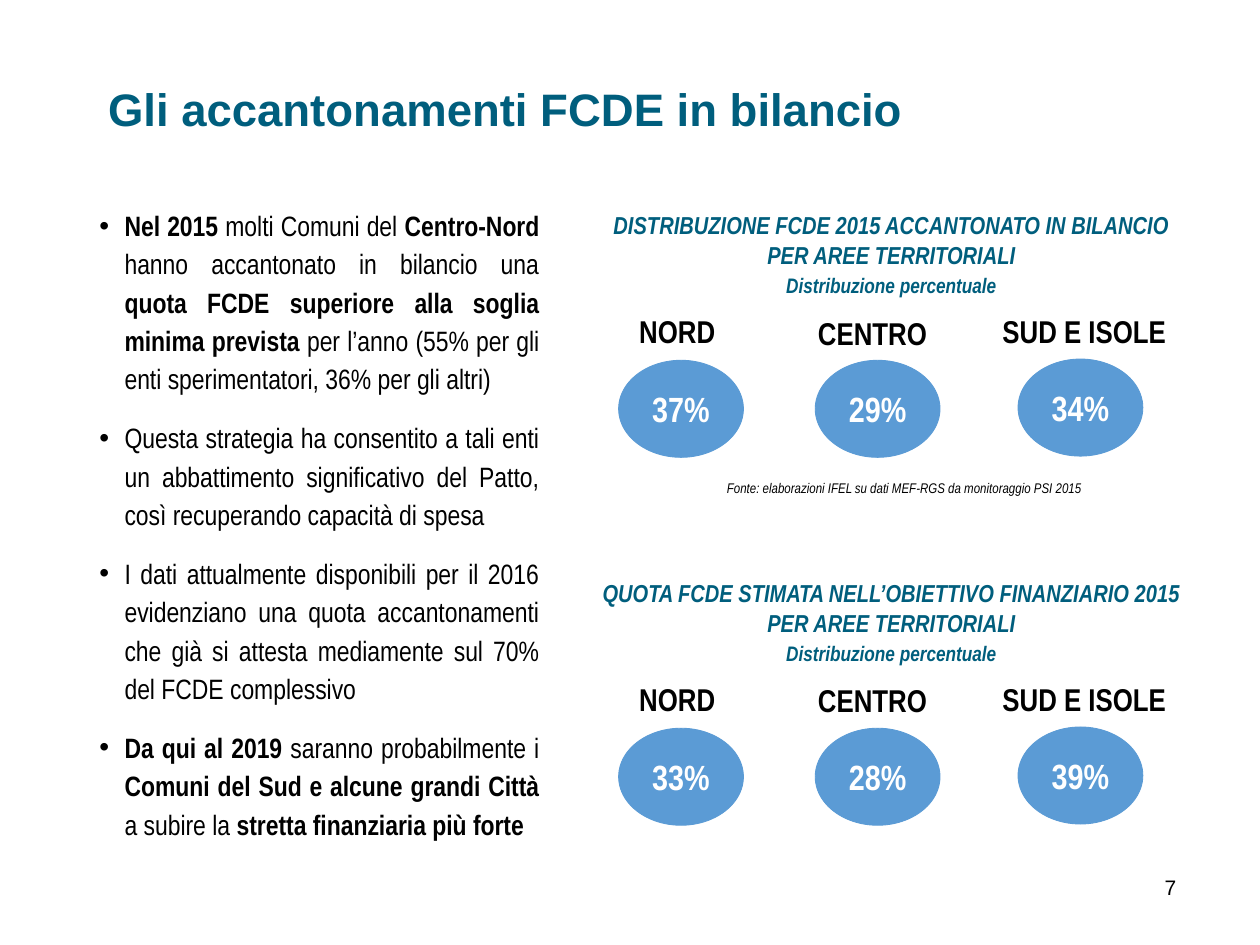
from lxml import etree
from pptx import Presentation
from pptx.dml.color import RGBColor
from pptx.enum.shapes import MSO_SHAPE
from pptx.enum.text import MSO_ANCHOR, PP_ALIGN
from pptx.oxml.ns import qn
from pptx.util import Inches, Pt

LEFT, CENTER, JUSTIFY = PP_ALIGN.LEFT, PP_ALIGN.CENTER, PP_ALIGN.JUSTIFY
MIDDLE = MSO_ANCHOR.MIDDLE
OVAL = MSO_SHAPE.OVAL

TEAL = RGBColor(0x00, 0x5E, 0x7D)
BLUE = RGBColor(0x5B, 0x9B, 0xD5)
BLACK = RGBColor(0x00, 0x00, 0x00)
WHITE = RGBColor(0xFF, 0xFF, 0xFF)

SANS, NARROW = "Arial", "Arial Narrow"
WIDTH, HEIGHT = Inches(10), Inches(7.5)
COLUMNS, ROWS = 100, 75

BULLETS = [
    [("Nel 2015", True), (" molti Comuni del", False), (" Centro-Nord ", True),
     ("hanno accantonato in bilancio una", False),
     (" quota FCDE superiore alla soglia minima prevista ", True),
     ("per l’anno (55% per gli enti sperimentatori, 36% per gli altri)", False)],
    [("Questa strategia ha consentito a tali enti un abbattimento significativo "
      "del Patto, così recuperando capacità di spesa", False)],
    [("I dati attualmente disponibili per il 2016 evidenziano una quota "
      "accantonamenti che già si attesta mediamente sul 70% del FCDE complessivo", False)],
    [("Da qui al 2019", True), (" saranno probabilmente i ", False),
     ("Comuni del Sud e alcune grandi Città", True), (" a subire la ", False),
     ("stretta finanziaria più forte", True)],
]

AREAS = [
    ("NORD", 49.4, 8.7, 49.1, 0),
    ("CENTRO", 63.6, 11.3, 64.7, 0.1),
    ("SUD E ISOLE", 77.5, 17.1, 80.8, -0.1),
]

PANELS = [
    (16.2, "DISTRIBUZIONE FCDE 2015 ACCANTONATO IN BILANCIO PER AREE TERRITORIALI",
     ["37%", "29%", "34%"]),
    (45.4, "QUOTA FCDE STIMATA NELL’OBIETTIVO FINANZIARIO 2015 PER AREE TERRITORIALI",
     ["33%", "28%", "39%"]),
]


def cells(col, row, cols, rows):
    x, y = WIDTH / COLUMNS, HEIGHT / ROWS
    return int(col * x), int(row * y), int(cols * x), int(rows * y)


def add_run(p, text, size, color=BLACK, font=NARROW, bold=False, italic=False):
    r = p.add_run()
    r.text = text
    r.font.size = Pt(size)
    r.font.name = font
    r.font.color.rgb = color
    r.font.bold = bold
    r.font.italic = italic


def add_box(s, area, wrap=True):
    tf = s.shapes.add_textbox(*cells(*area)).text_frame
    tf.word_wrap = wrap
    return tf


def add_line(s, area, text, size, align=CENTER, wrap=True, **style):
    p = add_box(s, area, wrap).paragraphs[0]
    p.alignment = align
    add_run(p, text, size, **style)


def add_bullets(s, area, items):
    tf = add_box(s, area)
    for i, runs in enumerate(items):
        p = tf.add_paragraph() if i else tf.paragraphs[0]
        p.alignment = JUSTIFY
        p.line_spacing = 1.14
        p.space_before = Pt(12 if i else 0)
        pPr = p._p.get_or_add_pPr()
        pPr.set("marL", str(Inches(0.2)))
        pPr.set("indent", str(-Inches(0.2)))
        etree.SubElement(pPr, qn("a:buFont")).set("typeface", SANS)
        etree.SubElement(pPr, qn("a:buChar")).set("char", "•")
        for text, bold in runs:
            add_run(p, text, 16, bold=bold)


def add_heading(s, area, title, subtitle):
    tf = add_box(s, area)
    for i, (text, size, after) in enumerate([(title, 14, 2), (subtitle, 12, 12)]):
        p = tf.add_paragraph() if i else tf.paragraphs[0]
        p.alignment = CENTER
        p.space_after = Pt(after)
        add_run(p, text, size, TEAL, bold=True, italic=True)


def add_share(s, area, text):
    sp = s.shapes.add_shape(OVAL, *cells(*area))
    sp.shadow.inherit = False
    sp.fill.solid()
    sp.fill.fore_color.rgb = BLUE
    sp.line.color.rgb = BLUE
    sp.line.width = Pt(0.5)
    tf = sp.text_frame
    tf.word_wrap = False
    tf.vertical_anchor = MIDDLE
    p = tf.paragraphs[0]
    p.alignment = CENTER
    add_run(p, text, 20, WHITE, bold=True)


def add_panel(s, top, title, shares):
    add_heading(s, (46.2, top, 49.1, 8), title, "Distribuzione percentuale")
    for (name, label_col, label_cols, oval_col, shift), share in zip(AREAS, shares):
        label_row = top + 8.1 + max(shift, 0)
        add_line(s, (label_col, label_row, label_cols, 4), name, 18, wrap=False, bold=True)
        add_share(s, (oval_col, top + 12.4 + min(shift, 0), 9.9, 7.7), share)


def main():
    prs = Presentation()
    prs.slide_width, prs.slide_height = WIDTH, HEIGHT
    s = prs.slides.add_slide(prs.slide_layouts[6])
    add_line(s, (7.6, 5.9, 77.6, 5), "Gli accantonamenti FCDE in bilancio", 26,
             align=LEFT, color=TEAL, font=SANS, bold=True)
    add_bullets(s, (6.9, 15.7, 36.9, 52.1), BULLETS)
    for top, title, shares in PANELS:
        add_panel(s, top, title, shares)
    add_line(s, (53.8, 37.6, 36, 2.4),
             "Fonte: elaborazioni IFEL su dati MEF-RGS da monitoraggio PSI 2015", 8, italic=True)
    add_line(s, (88.9, 68.9, 8, 5), "7", 12, font=SANS)
    prs.save("out.pptx")


if __name__ == "__main__":
    main()
